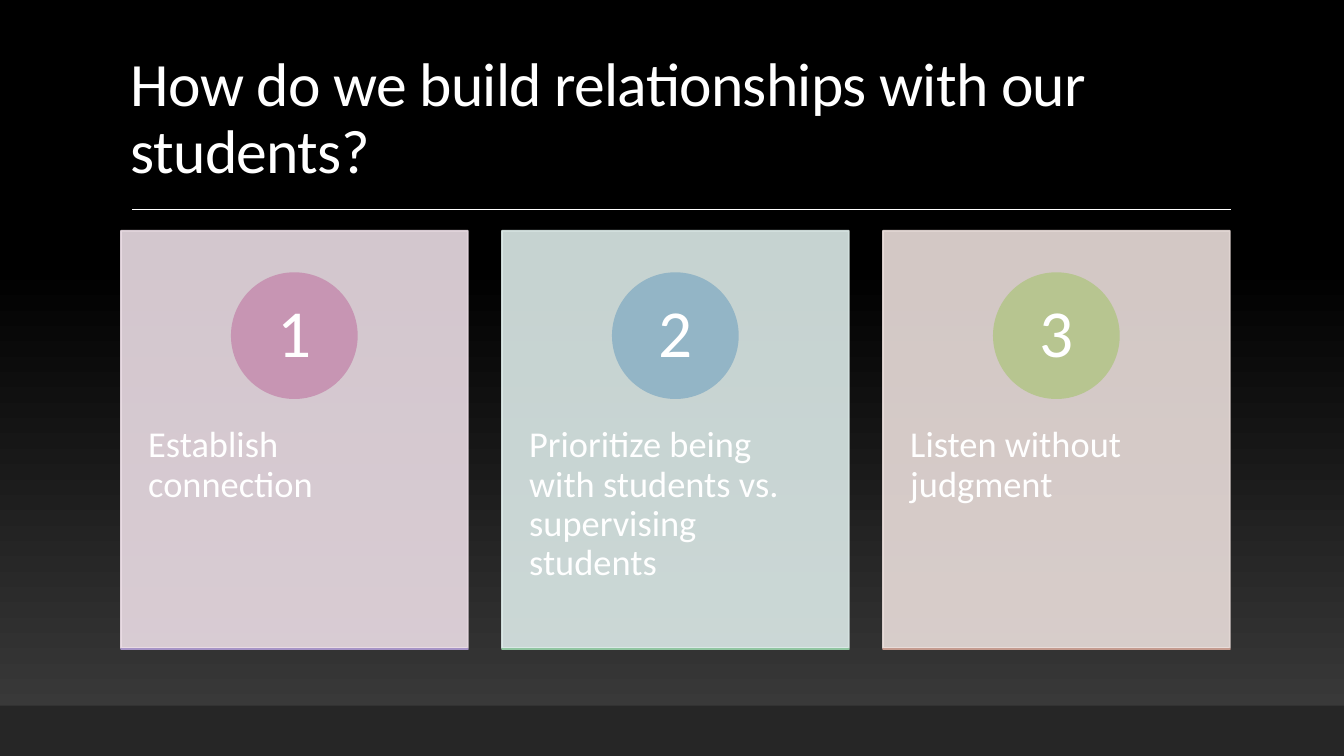
from dataclasses import dataclass

from pptx import Presentation
from pptx.dml.color import RGBColor
from pptx.dml.fill import FillFormat
from pptx.enum.shapes import MSO_CONNECTOR as Connector, MSO_SHAPE as Shape
from pptx.enum.text import MSO_ANCHOR as Anchor, PP_ALIGN as Align
from pptx.oxml.ns import qn
from pptx.oxml.xmlchemy import OxmlElement
from pptx.shapes.autoshape import Shape as AutoShape
from pptx.slide import Slide
from pptx.text.text import _Paragraph as Paragraph
from pptx.util import Inches, Pt

SLIDE_WIDTH, SLIDE_HEIGHT = Inches(13.333), Inches(7.5)
FONT = "Calibri"
WHITE = RGBColor(0xFF, 0xFF, 0xFF)
BLACK = RGBColor(0x00, 0x00, 0x00)
GRAPHITE = RGBColor(0x3F, 0x3F, 0x3F)
FOOTER = RGBColor(0x26, 0x26, 0x26)
PINK_PALE, PINK, VIOLET = RGBColor(0xEB, 0xDD, 0xE5), RGBColor(0xC7, 0x95, 0xB3), RGBColor(0xA6, 0x94, 0xC6)
TEAL_PALE, BLUE, GREEN = RGBColor(0xDC, 0xEA, 0xE8), RGBColor(0x93, 0xB5, 0xC6), RGBColor(0x91, 0xC5, 0xA1)
ROSE_PALE, LIME, CLAY = RGBColor(0xEA, 0xDE, 0xDB), RGBColor(0xB7, 0xC5, 0x90), RGBColor(0xC4, 0x9B, 0x8F)

CARD_LEFT, CARD_WIDTH, CARD_STEP = 9, 25.8, 28.35


@dataclass(frozen=True)
class Area:
    """Left, top, width and height as percentages of the slide."""

    left: float
    top: float
    width: float
    height: float

    def emu(self) -> tuple[int, int, int, int]:
        return across(self.left), down(self.top), across(self.width), down(self.height)


@dataclass(frozen=True)
class Card:
    text: str
    panel: RGBColor
    circle: RGBColor
    edge: RGBColor


CARDS = [
    Card("Establish connection", PINK_PALE, PINK, VIOLET),
    Card("Prioritize being with students vs. supervising students", TEAL_PALE, BLUE, GREEN),
    Card("Listen without judgment", ROSE_PALE, LIME, CLAY),
]


def across(percent: float) -> int:
    return round(SLIDE_WIDTH * percent / 100)


def down(percent: float) -> int:
    return round(SLIDE_HEIGHT * percent / 100)


def shade(fill: FillFormat) -> None:
    fill.gradient()
    fill.gradient_angle = 90
    for stop, color, position in zip(fill.gradient_stops, (GRAPHITE, BLACK), (0, 0.65)):
        stop.color.rgb = color
        stop.position = position


def add_shape(page: Slide, kind: Shape, area: Area) -> AutoShape:
    shape = page.shapes.add_shape(kind, *area.emu())
    shape.shadow.inherit = False
    shape.line.fill.background()
    return shape


def add_solid(page: Slide, kind: Shape, area: Area, color: RGBColor, outlined: bool = True) -> AutoShape:
    shape = add_shape(page, kind, area)
    shape.fill.solid()
    shape.fill.fore_color.rgb = color
    if outlined:
        shape.line.color.rgb = color
        shape.line.width = Pt(1.25)
    return shape


def make_translucent(shape: AutoShape, percent: int) -> None:
    for color in shape._element.spPr.iter(qn("a:srgbClr")):
        alpha = OxmlElement("a:alpha")
        alpha.set("val", str(percent * 1000))
        color.append(alpha)


def add_text(page: Slide, area: Area, text: str, size: int, anchor: Anchor = Anchor.TOP,
             align: Align = Align.LEFT, inset_x: float = 0.1, inset_y: float = 0.05) -> Paragraph:
    frame = page.shapes.add_textbox(*area.emu()).text_frame
    frame.word_wrap = True
    frame.vertical_anchor = anchor
    frame.margin_left = frame.margin_right = Inches(inset_x)
    frame.margin_top = frame.margin_bottom = Inches(inset_y)
    para = frame.paragraphs[0]
    para.text = text
    para.alignment = align
    para.line_spacing = 0.9
    para.font.name = FONT
    para.font.size = Pt(size)
    para.font.color.rgb = WHITE
    return para


def add_title(page: Slide) -> None:
    title = add_text(page, Area(CARD_LEFT, 4.13, 82.5, 21.2),
                     "How do we build relationships with our students?", 44, Anchor.BOTTOM)
    title.runs[0]._r.get_or_add_rPr().set("spc", "-50")
    rule = page.shapes.add_connector(Connector.STRAIGHT, across(9.83), down(27.73), across(91.58), down(27.73))
    rule.line.color.rgb = WHITE
    rule.line.width = Pt(1)
    rule._element.spPr.append(OxmlElement("a:effectLst"))


def add_card(page: Slide, index: int, card: Card) -> None:
    left = CARD_LEFT + index * CARD_STEP
    center = left + CARD_WIDTH / 2
    panel = add_solid(page, Shape.RECTANGLE, Area(left, 30.53, CARD_WIDTH, 55.2), card.panel)
    make_translucent(panel, 90)
    add_text(page, Area(left, 51.6, CARD_WIDTH, 33.07), card.text, 26, inset_x=0.27, inset_y=0.36)
    add_solid(page, Shape.OVAL, Area(center - 4.65, 36.13, 9.3, 16.53), card.circle)
    add_text(page, Area(center - 3.3, 38.53, 6.6, 11.73), str(index + 1), 48,
             Anchor.MIDDLE, Align.CENTER, inset_y=0.01)
    add_solid(page, Shape.RECTANGLE, Area(left, 85.87, CARD_WIDTH, 0), card.edge)


def main() -> None:
    deck = Presentation()
    deck.slide_width, deck.slide_height = SLIDE_WIDTH, SLIDE_HEIGHT
    page = deck.slides.add_slide(deck.slide_layouts[6])
    shade(page.background.fill)
    shade(add_shape(page, Shape.RECTANGLE, Area(0, 0, 100, 100)).fill)
    add_title(page)
    add_solid(page, Shape.RECTANGLE, Area(0, 93.33, 100, 6.67), FOOTER, outlined=False)
    for index, card in enumerate(CARDS):
        add_card(page, index, card)
    deck.save("out.pptx")


if __name__ == "__main__":
    main()
